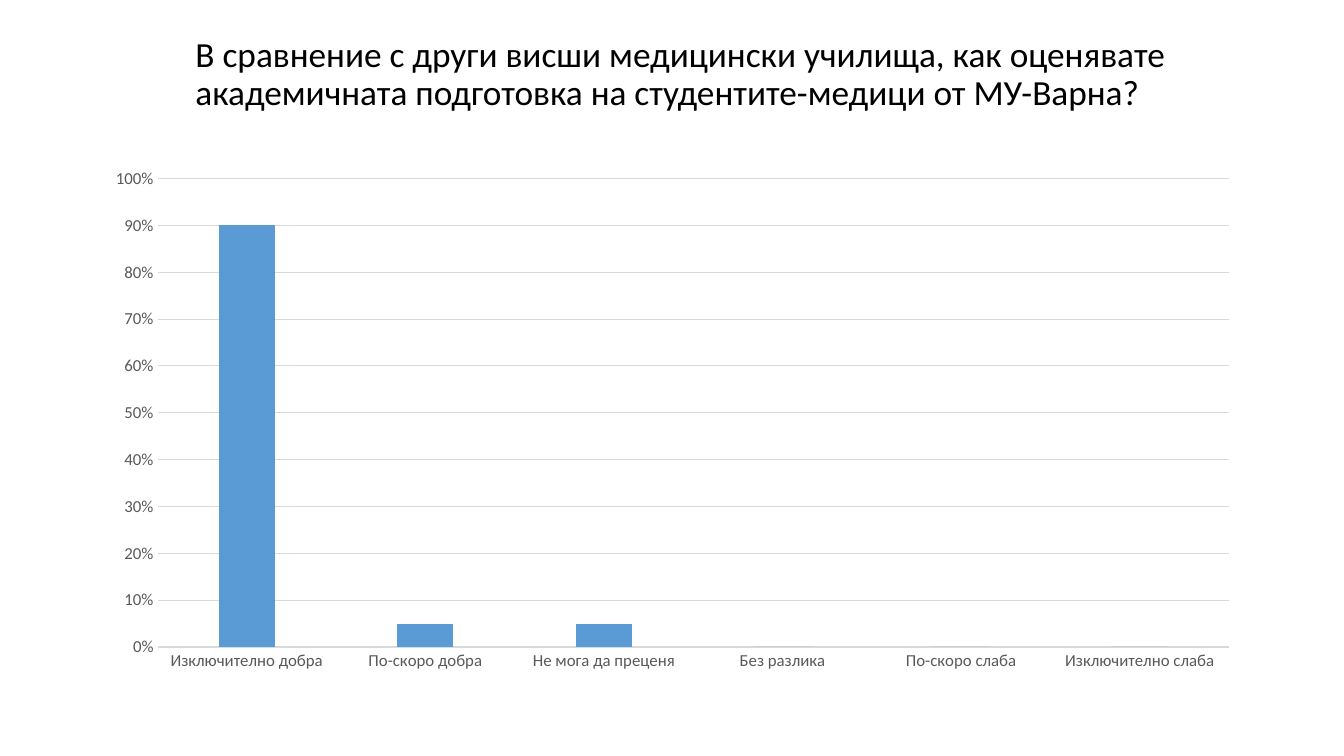
from pptx import Presentation
from pptx.chart.data import CategoryChartData
from pptx.dml.color import RGBColor
from pptx.enum.chart import XL_CHART_TYPE, XL_TICK_MARK
from pptx.enum.text import MSO_ANCHOR
from pptx.util import Inches, Pt

FONT = "Calibri"
BLACK, GREY, PALE_GREY, BLUE = "000000", "595959", "D9D9D9", "5B9BD5"

QUESTION = ("В сравнение с други висши медицински училища, как оценявате "
            "академичната подготовка на студентите-медици от МУ-Варна?")
RATINGS = {
    "Изключително добра": 0.9,
    "По-скоро добра": 0.05,
    "Не мога да преценя": 0.05,
    "Без разлика": 0,
    "По-скоро слаба": 0,
    "Изключително слаба": 0,
}


def color(hex_value):
    return RGBColor.from_string(hex_value)


def style_font(font, size, hex_value):
    for name, value in {"name": FONT, "size": Pt(size), "bold": False}.items():
        setattr(font, name, value)
    font.color.rgb = color(hex_value)


def style_line(line, hex_value):
    line.color.rgb = color(hex_value)
    line.width = Pt(0.75)


def style_axis(axis):
    axis.major_tick_mark = XL_TICK_MARK.NONE
    axis.minor_tick_mark = XL_TICK_MARK.NONE
    style_font(axis.tick_labels.font, 12, GREY)


def add_question(slide):
    box = slide.shapes.add_textbox(Inches(1.84), Inches(0.15), Inches(10.58), Inches(1.19))
    frame = box.text_frame
    frame.word_wrap = True
    frame.vertical_anchor = MSO_ANCHOR.MIDDLE
    paragraph = frame.paragraphs[0]
    paragraph.line_spacing = 0.9
    run = paragraph.add_run()
    run.text = QUESTION
    style_font(run.font, 25.2, BLACK)


def add_ratings_chart(slide):
    ratings = CategoryChartData(number_format="0%")
    ratings.categories = RATINGS.keys()
    ratings.add_series("Series 1", RATINGS.values())
    chart = slide.shapes.add_chart(
        XL_CHART_TYPE.COLUMN_CLUSTERED,
        Inches(0.92), Inches(1.57), Inches(11.5), Inches(5.19), ratings).chart
    chart.has_title = False
    chart.has_legend = False
    style_font(chart.font, 10, BLACK)

    columns = chart.plots[0]
    for name, value in {"gap_width": 219, "overlap": -27, "vary_by_categories": False}.items():
        setattr(columns, name, value)
    fill = columns.series[0].format.fill
    fill.solid()
    fill.fore_color.rgb = color(BLUE)

    style_axis(chart.category_axis)
    style_line(chart.category_axis.format.line, PALE_GREY)

    percent_axis = chart.value_axis
    style_axis(percent_axis)
    scale = {"minimum_scale": 0, "maximum_scale": 1, "major_unit": 0.1}
    for name, value in scale.items():
        setattr(percent_axis, name, value)
    percent_axis.tick_labels.number_format = "0%"
    percent_axis.tick_labels.number_format_is_linked = False
    percent_axis.format.line.fill.background()
    style_line(percent_axis.major_gridlines.format.line, PALE_GREY)


def main():
    presentation = Presentation()
    presentation.slide_width = Inches(13.33)
    presentation.slide_height = Inches(7.5)
    slide = presentation.slides.add_slide(presentation.slide_layouts[6])
    add_question(slide)
    add_ratings_chart(slide)
    presentation.save("out.pptx")


if __name__ == "__main__":
    main()
